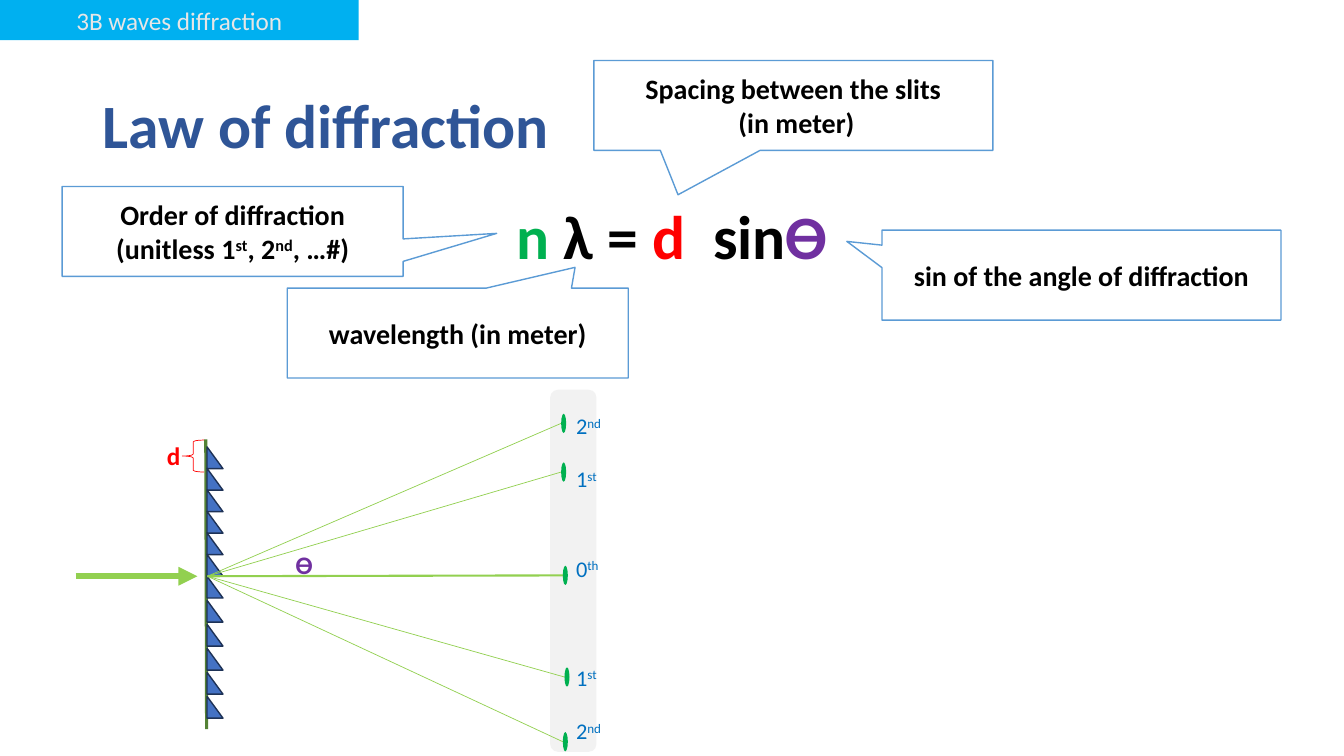
from dataclasses import dataclass

from lxml import etree
from pptx import Presentation
from pptx import util as u
from pptx.dml.color import RGBColor
from pptx.enum import shapes, text
from pptx.oxml.ns import qn

COLUMNS, ROWS = 160, 90
SHAPE = shapes.MSO_SHAPE


@dataclass(frozen=True)
class Theme:
    font: str = "Calibri"
    black: str = "000000"
    white: str = "FFFFFF"
    navy: str = "2F5597"
    sky: str = "00B0F0"
    pale: str = "E7E6E6"
    screen: str = "F2F2F2"
    outline: str = "5B9BD5"
    grating: str = "548235"
    tooth: str = "4472C4"
    tooth_edge: str = "1E3256"
    beam: str = "92D050"
    green: str = "00B050"
    red: str = "FF0000"
    purple: str = "7030A0"
    blue: str = "0070C0"
    display: int = 44
    note: int = 20
    small: int = 18
    order: int = 16


class SlideBuilder:
    def __init__(self, deck, theme):
        self.theme = theme
        self.cell_width = deck.slide_width / COLUMNS
        self.cell_height = deck.slide_height / ROWS
        self.page = deck.slides.add_slide(deck.slide_layouts[5])

    def place(self, left, top, width, height):
        return (round(left * self.cell_width), round(top * self.cell_height),
                round(width * self.cell_width), round(height * self.cell_height))

    def add_spans(self, para, spans, size, bold=False, align=None):
        para.alignment = align
        for content, color in spans:
            for index, piece in enumerate(content.split("^")):
                for row, line in enumerate(piece.split("\n")):
                    if row:
                        para.add_line_break()
                    if not line:
                        continue
                    span = para.add_run()
                    span.text = line
                    font = span.font
                    font.name, font.size, font.bold = self.theme.font, u.Pt(size), bold
                    font.color.rgb = RGBColor.from_string(color)
                    if index % 2:
                        span._r.get_or_add_rPr().set("baseline", "30000")

    def title(self, content, area):
        box = self.page.shapes.title
        box.left, box.top, box.width, box.height = self.place(*area)
        frame = box.text_frame
        frame.vertical_anchor = text.MSO_ANCHOR.MIDDLE
        para = frame.paragraphs[0]
        para.line_spacing = 0.9
        self.add_spans(para, [(content, self.theme.navy)], self.theme.display, True,
                       text.PP_ALIGN.LEFT)

    def text_box(self, area):
        frame = self.page.shapes.add_textbox(*self.place(*area)).text_frame
        frame.word_wrap = True
        return frame

    def shape(self, kind, area, fill=None, line=None, weight=1, adjustments=()):
        shape = self.page.shapes.add_shape(kind, *self.place(*area))
        shape.shadow.inherit = False
        if fill:
            shape.fill.solid()
            shape.fill.fore_color.rgb = RGBColor.from_string(fill)
        else:
            shape.fill.background()
        if line:
            shape.line.color.rgb = RGBColor.from_string(line)
            shape.line.width = u.Pt(weight)
        else:
            shape.line.fill.background()
        for index, value in enumerate(adjustments):
            shape.adjustments[index] = value
        return shape

    def callout(self, content, area, tip):
        theme = self.theme
        box = self.shape(SHAPE.RECTANGULAR_CALLOUT, area, theme.white, theme.outline, adjustments=tip)
        box.text_frame.vertical_anchor = text.MSO_ANCHOR.MIDDLE
        self.add_spans(box.text_frame.paragraphs[0], [(content, theme.black)], theme.note, True,
                       text.PP_ALIGN.CENTER)

    def line(self, start, end, color, weight, arrow=False):
        points = self.place(*start, *end)
        line = self.page.shapes.add_connector(shapes.MSO_CONNECTOR.STRAIGHT, *points)
        line.line.color.rgb = RGBColor.from_string(color)
        line.line.width = u.Pt(weight)
        if arrow:
            etree.SubElement(line.line._get_or_add_ln(), qn("a:tailEnd"), type="triangle")
        etree.SubElement(line._element.spPr, qn("a:effectLst"))


def main():
    deck = Presentation()
    deck.slide_width, deck.slide_height = u.Inches(13.33), u.Inches(7.5)
    theme = Theme()
    slide = SlideBuilder(deck, theme)
    center = text.PP_ALIGN.CENTER

    slide.shape(SHAPE.FLOWCHART_ALTERNATE_PROCESS, (65.5, 46.4, 5.5, 43.1), theme.screen)
    slide.title("Law of diffraction", (11, 6.6, 138, 17.4))
    tag = slide.shape(SHAPE.RECTANGLE, (0, 0, 42.7, 4.8), theme.sky)
    slide.add_spans(tag.text_frame.paragraphs[0], [("3B waves diffraction", theme.pale)],
                    theme.small, align=center)

    formula = slide.text_box((11, 24, 138, 57.1)).paragraphs[0]
    formula.line_spacing = 0.9
    slide.add_spans(formula, [("n ", theme.green), ("λ = ", theme.black), ("d", theme.red),
                              ("  sin", theme.black), ("ϴ", theme.purple)],
                    theme.display, True, center)

    callouts = [
        ("Order of diffraction\n(unitless 1^st^, 2^nd^, …#)", 7.4, 22.2, 40.6, (0.774, 0.022)),
        ("wavelength (in meter)", 34.2, 34.3, 40.6, (0.344, -0.731)),
        ("Spacing between the slits\n (in meter)", 70.7, 7.2, 47.5, (-0.289, 0.994)),
        ("sin of the angle of diffraction", 105, 27.4, 47.5, (-0.588, -0.375)),
    ]
    for content, left, top, width, tip in callouts:
        slide.callout(content, (left, top, width, 10.7), tip)

    slide.line((24.5, 52.3), (24.6, 86.8), theme.grating, 2.25)
    for first_top, step in ((53.2, 2.56), (68.6, 2.86)):
        for tooth in range(6):
            slide.shape(SHAPE.RIGHT_TRIANGLE, (24.65, first_top + tooth * step, 1.9, 2.6),
                        theme.tooth, theme.tooth_edge)

    slide.line((9, 68.6), (23.5, 68.6), theme.beam, 4.5, arrow=True)
    orders = [
        ("2^nd^", 66.8, 50.4, 0.5, 0),
        ("1^st^", 66.8, 56.2, 0.5, 18.7),
        ("0^th^", 67, 68.5, 1.5, 45),
        ("1^st^", 67.2, 80.6, 0.5, 58.5),
        ("2^nd^", 67, 88.3, 0.5, 19),
    ]
    labels = slide.text_box((67.4, 48.5, 7.6, 41))
    for index, (label, left, middle, weight, gap) in enumerate(orders):
        para = labels.add_paragraph() if index else labels.paragraphs[0]
        para.space_before = u.Pt(gap)
        slide.add_spans(para, [(label, theme.blue)], theme.order)
        slide.line((24.7, 68.6), (left, middle), theme.beam, weight)
        slide.shape(SHAPE.FLOWCHART_CONNECTOR, (left, middle - 1.15, 0.6, 2.3), theme.green)

    for label, area, color in (("ϴ", (34, 64.8, 80, 4.8), theme.purple),
                               ("d", (18.7, 51.8, 4.6, 4.8), theme.red)):
        slide.add_spans(slide.text_box(area).paragraphs[0], [(label, color)], theme.small, True)
    slide.shape(SHAPE.LEFT_BRACE, (21.7, 52.4, 2.6, 3.8), line=theme.red, weight=0.5)

    deck.save("out.pptx")


if __name__ == "__main__":
    main()
